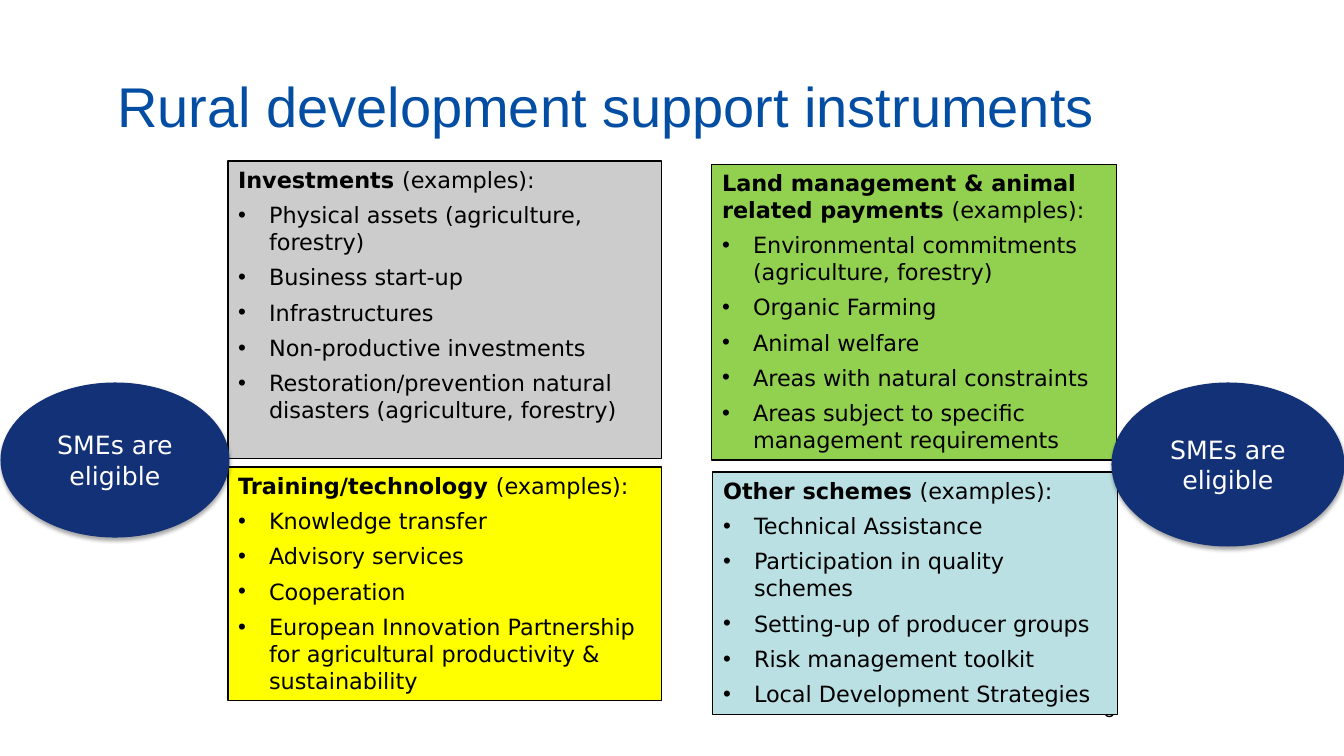
from lxml import etree
from pptx import Presentation
from pptx.dml.color import RGBColor
from pptx.enum.shapes import MSO_SHAPE
from pptx.enum.text import MSO_ANCHOR, MSO_AUTO_SIZE, PP_ALIGN
from pptx.oxml import parse_xml
from pptx.oxml.ns import qn
from pptx.util import Pt

PX = 12192000 / 1344
BLACK = RGBColor(0x00, 0x00, 0x00)
WHITE = RGBColor(0xFF, 0xFF, 0xFF)
TITLE_BLUE = RGBColor(0x03, 0x4E, 0xA2)
NAVY = RGBColor(0x13, 0x31, 0x76)
GREY = RGBColor(0xCC, 0xCC, 0xCC)
GREEN = RGBColor(0x92, 0xD0, 0x50)
YELLOW = RGBColor(0xFF, 0xFF, 0x00)
PALE_BLUE = RGBColor(0xBB, 0xE0, 0xE3)
SHADOW = (
    '<a:effectLst xmlns:a="http://schemas.openxmlformats.org/drawingml/2006/main">'
    '<a:outerShdw blurRad="39370" dist="22860" dir="5400000" rotWithShape="0">'
    '<a:srgbClr val="000000"><a:alpha val="35000"/></a:srgbClr>'
    '</a:outerShdw></a:effectLst>'
)


def place(sp, *box):
    sp.left, sp.top, sp.width, sp.height = (round(v * PX) for v in box)
    tf = sp.text_frame
    tf.word_wrap = True
    tf.auto_size = MSO_AUTO_SIZE.NONE
    return tf


def add_run(p, text, size, name, color, bold=False):
    r = p.add_run()
    r.text = text
    fmt = {"size": Pt(size), "name": name, "bold": bold}
    for key, value in fmt.items():
        setattr(r.font, key, value)
    r.font.color.rgb = color


prs = Presentation()
prs.slide_width = round(1344 * PX)
prs.slide_height = round(756 * PX)
s = prs.slides.add_slide(prs.slide_layouts[4])

title = s.shapes.title
tf = place(title, 107, 53, 1159, 87)
tf.vertical_anchor = MSO_ANCHOR.BOTTOM
tf.margin_bottom = 0
p = tf.paragraphs[0]
p.alignment = PP_ALIGN.LEFT
p.line_spacing = 0.9
add_run(p, "Rural development support instruments", 40, "Arial", TITLE_BLUE)

number = s.shapes.add_textbox(0, 0, 0, 0)
p = place(number, 890, 693, 235, 52).paragraphs[0]
p.alignment = PP_ALIGN.RIGHT
add_run(p, "5", 14, "Arial", BLACK)
title.element.addprevious(number.element)

boxes = [
    ((228, 161, 434, 298), GREY, "Investments ", [
        "Physical assets (agriculture, forestry)",
        "Business start-up",
        "Infrastructures",
        "Non-productive investments",
        "Restoration/prevention natural disasters (agriculture, forestry)",
    ]),
    ((712, 164, 405, 296), GREEN, "Land management & animal related payments ", [
        "Environmental commitments (agriculture, forestry)",
        "Organic Farming",
        "Animal welfare",
        "Areas with natural constraints",
        "Areas subject to specific management requirements",
    ]),
    ((228, 467, 434, 234), YELLOW, "Training/technology ", [
        "Knowledge transfer",
        "Advisory services",
        "Cooperation",
        "European Innovation Partnership for agricultural productivity & sustainability",
    ]),
    ((713, 472, 405, 243), PALE_BLUE, "Other schemes ", [
        "Technical Assistance",
        "Participation in quality schemes",
        "Setting-up of producer groups",
        "Risk management toolkit",
        "Local Development Strategies",
    ]),
]
for idx, (box, fill, heading, items) in enumerate(boxes, 1):
    sp = s.placeholders[idx]
    tf = place(sp, *box)
    tf.vertical_anchor = MSO_ANCHOR.TOP
    sp.fill.solid()
    sp.fill.fore_color.rgb = fill
    sp.line.color.rgb = BLACK
    sp.line.width = Pt(0.75)
    p = tf.paragraphs[0]
    p.space_before = Pt(0)
    pPr = p._p.get_or_add_pPr()
    pPr.set("marL", "0")
    pPr.set("indent", "0")
    etree.SubElement(pPr, qn("a:buNone"))
    add_run(p, heading, 16, "DejaVu Sans", BLACK, True)
    add_run(p, "(examples):", 16, "DejaVu Sans", BLACK)
    for item in items:
        p = tf.add_paragraph()
        p.space_before = Pt(6)
        pPr = p._p.get_or_add_pPr()
        pPr.set("marL", str(round(31 * PX)))
        pPr.set("indent", str(round(-31 * PX)))
        etree.SubElement(pPr, qn("a:buFont")).set("typeface", "Arial")
        etree.SubElement(pPr, qn("a:buChar")).set("char", "•")
        add_run(p, item, 16, "DejaVu Sans", BLACK)

for box in [(1112, 383, 232, 163), (1, 383, 228, 154)]:
    sp = s.shapes.add_shape(MSO_SHAPE.OVAL, 0, 0, 0, 0)
    tf = place(sp, *box)
    tf.vertical_anchor = MSO_ANCHOR.MIDDLE
    sp.fill.solid()
    sp.fill.fore_color.rgb = NAVY
    sp.line.color.rgb = NAVY
    sp.line.width = Pt(0.75)
    sp.element.spPr.append(parse_xml(SHADOW))
    p = tf.paragraphs[0]
    p.alignment = PP_ALIGN.CENTER
    add_run(p, "SMEs are eligible", 18, "DejaVu Sans", WHITE)

prs.save("out.pptx")
